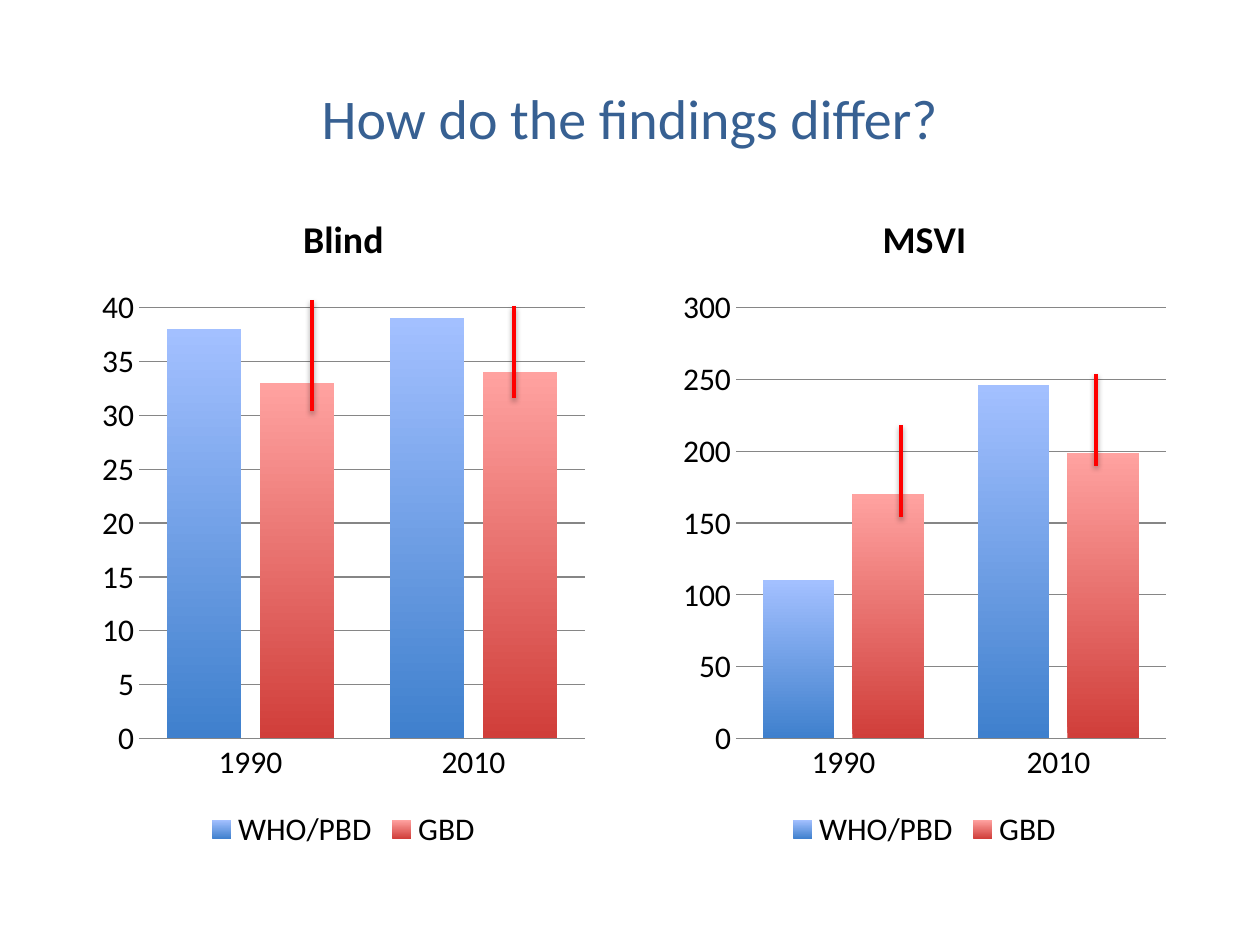
import dataclasses

import lxml.etree
import pptx
import pptx.chart.data
import pptx.dml.color
import pptx.enum.chart
import pptx.enum.shapes
import pptx.enum.text
import pptx.oxml
import pptx.oxml.ns
import pptx.util

EMU_PER_PX = 914400 / 126
FONT = "Calibri"
COLORS = {
    "heading": "376092",
    "text": "000000",
    "grid": "868686",
    "range": "FF0000",
    "who_dark": "3F80CD",
    "who_light": "A3C0FF",
    "gbd_dark": "D03E3A",
    "gbd_light": "FFA2A0",
}
YEARS = ("1990", "2010")
SOURCES = {"WHO/PBD": "who", "GBD": "gbd"}
CHART_TOP, CHART_WIDTH, CHART_HEIGHT = 185, 503, 670


@dataclasses.dataclass
class Finding:
    title: str
    left: int
    values: tuple[tuple[int, ...], ...]
    maximum: int
    step: int


@dataclasses.dataclass
class RangeMark:
    x: int
    top: int
    bottom: int


FINDINGS = (
    Finding("Blind", 92, ((38, 39), (33, 34)), 40, 5),
    Finding("MSVI", 673, ((110, 246), (170, 199)), 300, 50),
)
RANGE_MARKS = (
    RangeMark(312, 300, 411),
    RangeMark(514, 306, 398),
    RangeMark(901, 425, 517),
    RangeMark(1096, 374, 466),
)


def px(length: int) -> pptx.util.Emu:
    return pptx.util.Emu(round(length * EMU_PER_PX))


def color(name: str) -> pptx.dml.color.RGBColor:
    return pptx.dml.color.RGBColor.from_string(COLORS[name])


def format_font(font, size: float, ink: str = "text", bold: bool = False) -> None:
    font.name = FONT
    font.size = pptx.util.Pt(size)
    font.bold = bold
    font.color.rgb = color(ink)


def write(frame, text: str, *, size: float, ink: str = "text", bold: bool = False) -> None:
    paragraph = frame.paragraphs[0]
    paragraph.alignment = pptx.enum.text.PP_ALIGN.CENTER
    run = paragraph.add_run()
    run.text = text
    format_font(run.font, size, ink, bold)


def draw_heading(slide, text: str) -> None:
    heading = slide.shapes.add_textbox(px(63), px(38), px(1134), px(158)).text_frame
    heading.word_wrap = True
    heading.vertical_anchor = pptx.enum.text.MSO_ANCHOR.MIDDLE
    write(heading, text, size=32, ink="heading")


def style_axes(chart, finding: Finding) -> None:
    years, amounts = chart.category_axis, chart.value_axis
    for axis in (years, amounts):
        axis.major_tick_mark = pptx.enum.chart.XL_TICK_MARK.NONE
        axis.minor_tick_mark = pptx.enum.chart.XL_TICK_MARK.NONE
        format_font(axis.tick_labels.font, 18)
    amounts.minimum_scale = 0
    amounts.maximum_scale = finding.maximum
    amounts.major_unit = finding.step
    amounts.has_major_gridlines = True
    amounts.format.line.fill.background()
    for line in (years.format.line, amounts.major_gridlines.format.line):
        line.color.rgb = color("grid")
        line.width = pptx.util.Pt(0.75)


def draw_finding(slide, finding: Finding) -> None:
    data = pptx.chart.data.CategoryChartData()
    data.categories = YEARS
    for source, values in zip(SOURCES, finding.values):
        data.add_series(source, values)
    chart = slide.shapes.add_chart(
        pptx.enum.chart.XL_CHART_TYPE.COLUMN_CLUSTERED,
        px(finding.left), px(CHART_TOP), px(CHART_WIDTH), px(CHART_HEIGHT), data,
    ).chart
    format_font(chart.font, 18)

    chart.has_title = True
    write(chart.chart_title.text_frame, finding.title, size=21.6, bold=True)
    chart.chart_title.include_in_layout = False
    chart.has_legend = True
    chart.legend.position = pptx.enum.chart.XL_LEGEND_POSITION.BOTTOM
    chart.legend.include_in_layout = False
    format_font(chart.legend.font, 18)
    style_axes(chart, finding)

    # Columns fade from dark at the base to light at the top
    plot = chart.plots[0]
    plot.gap_width = 75
    plot.overlap = -25
    plot.vary_by_categories = False
    for series, hue in zip(plot.series, SOURCES.values()):
        series.invert_if_negative = False
        fill = series.format.fill
        fill.gradient()
        fill.gradient_angle = 90
        for stop, shade, position in zip(fill.gradient_stops, ("dark", "light"), (0, 1)):
            stop.color.rgb = color(f"{hue}_{shade}")
            stop.position = position


def draw_range(slide, mark: RangeMark) -> None:
    line = slide.shapes.add_connector(
        pptx.enum.shapes.MSO_CONNECTOR.STRAIGHT,
        px(mark.x), px(mark.top), px(mark.x), px(mark.bottom),
    )
    line.line.color.rgb = color("range")
    line.line.width = pptx.util.Pt(2)
    # Soft shadow straight below the line
    qn = pptx.oxml.ns.qn
    effects = lxml.etree.SubElement(line._element.spPr, qn("a:effectLst"))
    shadow = lxml.etree.SubElement(
        effects, qn("a:outerShdw"),
        blurRad="40000", dist="20000", dir="5400000", rotWithShape="0",
    )
    ink = lxml.etree.SubElement(shadow, qn("a:srgbClr"), val=COLORS["text"])
    lxml.etree.SubElement(ink, qn("a:alpha"), val="38000")


def main() -> None:
    presentation = pptx.Presentation()
    presentation.slide_width = px(1260)
    presentation.slide_height = px(945)
    slide = presentation.slides.add_slide(presentation.slide_layouts[6])

    draw_heading(slide, "How do the findings differ?")
    for finding in FINDINGS:
        draw_finding(slide, finding)
    # Uncertainty ranges over the GBD columns
    for mark in RANGE_MARKS:
        draw_range(slide, mark)

    presentation.save("out.pptx")


if __name__ == "__main__":
    main()
